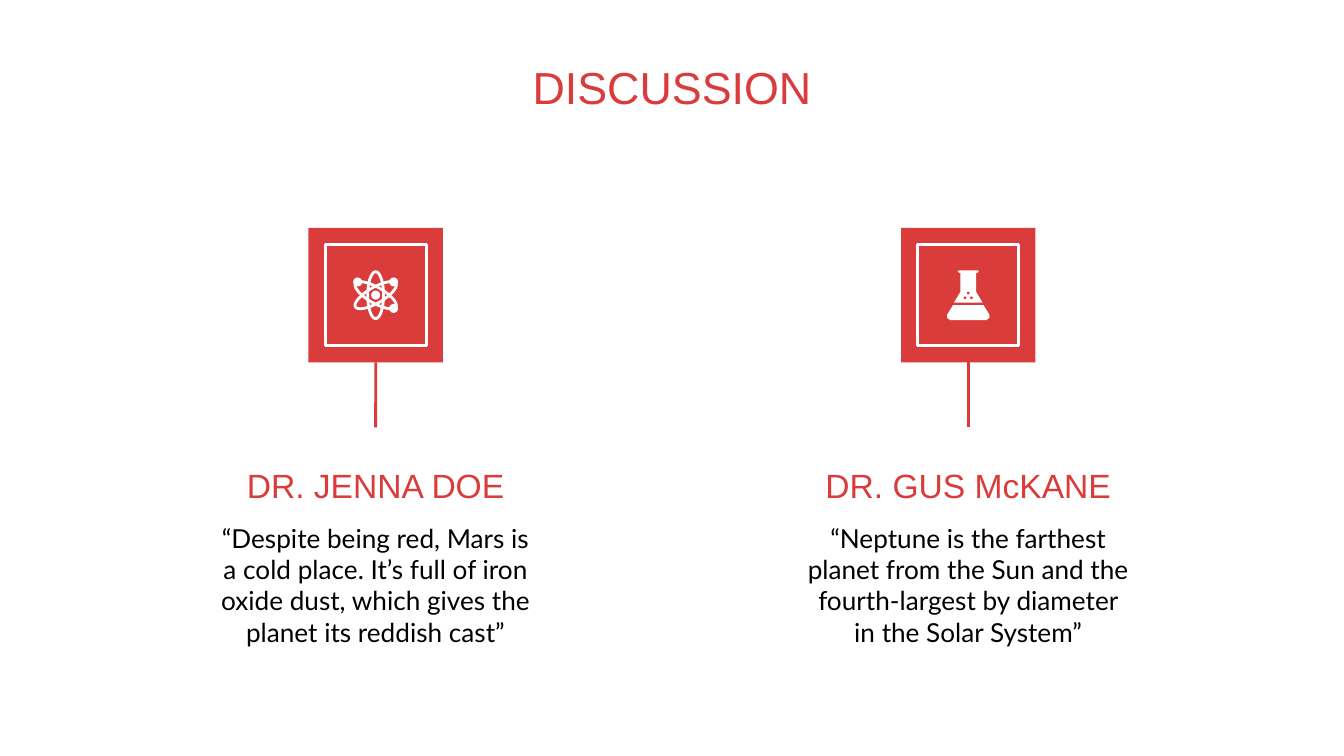
from lxml import etree
from pptx import Presentation
from pptx.dml.color import RGBColor
from pptx.enum.shapes import MSO_CONNECTOR, MSO_SHAPE
from pptx.enum.text import MSO_ANCHOR, MSO_AUTO_SIZE, PP_ALIGN
from pptx.oxml.ns import qn
from pptx.util import Cm, Pt

RED = RGBColor(0xDA, 0x3B, 0x3B)
WHITE = RGBColor(0xFF, 0xFF, 0xFF)
BLACK = RGBColor(0, 0, 0)
RECT = MSO_SHAPE.RECTANGLE
OVAL = MSO_SHAPE.OVAL
LINE = MSO_CONNECTOR.STRAIGHT
TOP = MSO_ANCHOR.TOP
BOTTOM = MSO_ANCHOR.BOTTOM
FIXED = MSO_AUTO_SIZE.NONE
CENTER = PP_ALIGN.CENTER

TITLE = {"name": "Arial", "size": Pt(24)}
NAME = {"name": "Arial", "size": Pt(18)}
QUOTE = {"name": "Lato", "size": Pt(14)}
PAD = 0.25
STROKE = Pt(1.5)

BASE = [(-0.29, 0.19), (-0.4, 0.37), (-0.4, 0.43), (-0.34, 0.47)]
NECK = [(-0.17, -0.47), (-0.2, -0.45), (-0.17, -0.42),
        (-0.15, -0.42), (-0.15, -0.06), (-0.27, 0.14)]


class Deck:
    def __init__(self, width, height):
        self.show = Presentation()
        self.show.slide_width = Cm(width)
        self.show.slide_height = Cm(height)
        self.slide = self.show.slides.add_slide(self.show.slide_layouts[5])
        self.shapes = self.slide.shapes

    def label(self, box, words, font, color, anchor):
        frame = box.text_frame
        frame.text = words
        sides = ("margin_left", "margin_top", "margin_right", "margin_bottom")
        style = {"word_wrap": True, "auto_size": FIXED, "vertical_anchor": anchor}
        for key, value in {**style, **dict.fromkeys(sides, Cm(PAD))}.items():
            setattr(frame, key, value)
        para = frame.paragraphs[0]
        para.alignment = CENTER
        for key, value in font.items():
            setattr(para.runs[0].font, key, value)
        para.runs[0].font.color.rgb = color

    def title(self, words, left, top, width, height):
        box = self.shapes.title
        place = {"left": left, "top": top, "width": width, "height": height}
        for key, value in place.items():
            setattr(box, key, Cm(value))
        self.label(box, words, TITLE, RED, TOP)

    def text(self, words, mid, top, width, height, font, color, anchor):
        box = self.shapes.add_textbox(
            Cm(mid - width / 2), Cm(top), Cm(width), Cm(height))
        self.label(box, words, font, color, anchor)
        return box

    def paint(self, shape, fill, line):
        shape.shadow.inherit = False
        if fill is None:
            shape.fill.background()
        else:
            shape.fill.solid()
            shape.fill.fore_color.rgb = fill
        if line is None:
            shape.line.fill.background()
        else:
            shape.line.color.rgb = line
            shape.line.width = STROKE

    def shape(self, kind, x, y, width, height, fill=None, line=None, turn=0):
        shape = self.shapes.add_shape(
            kind, Cm(x - width / 2), Cm(y - height / 2), Cm(width), Cm(height))
        shape.rotation = turn
        self.paint(shape, fill, line)
        return shape

    def outline(self, x, y, half, fill):
        ring = half + [(-dx, dy) for dx, dy in reversed(half)]
        points = [(Cm(x + dx), Cm(y + dy)) for dx, dy in ring]
        build = self.shapes.build_freeform(*points[0], scale=1.0)
        build.add_line_segments(points[1:], close=True)
        self.paint(build.convert_to_shape(), fill, None)

    def link(self, start, end):
        line = self.shapes.add_connector(LINE, 0, 0, 0, 0)
        line.begin_connect(start, 2)
        line.end_connect(end, 0)
        line.line.color.rgb = RED
        line.line.width = STROKE
        etree.SubElement(line._element.spPr, qn("a:effectLst"))

    def atom(self, x, y):
        for turn in (0, 60, 120):
            self.shape(OVAL, x, y, 0.3, 0.89, line=WHITE, turn=turn)
        self.shape(OVAL, x, y, 0.17, 0.17, WHITE)
        for dx, dy in ((-0.34, -0.25), (0.34, -0.25), (0.34, 0.25)):
            self.shape(OVAL, x + dx, y + dy, 0.17, 0.17, WHITE)

    def flask(self, x, y):
        for half in (BASE, NECK):
            self.outline(x, y, half, WHITE)
        for dx, dy in ((0, -0.04), (-0.06, 0.05), (0.06, 0.05)):
            self.shape(OVAL, x + dx, y + dy, 0.05, 0.05, RED)

    def card(self, mid, name, quote, icon):
        y = 5.58
        tile = self.shape(RECT, mid, y, 2.54, 2.54, RED)
        self.shape(RECT, mid, y, 1.91, 1.91, line=WHITE)
        head = self.text(name, mid, 8.08, 6.66, 1.72, NAME, RED, BOTTOM)
        self.text(quote, mid, 9.62, 6.66, 3.64, QUOTE, BLACK, TOP)
        self.link(tile, head)
        icon(mid, y)


def main():
    deck = Deck(25.4, 14.29)
    deck.title("DISCUSSION", 2.97, 0.87, 19.46, 1.6)
    cards = [
        (7.1, "DR. JENNA DOE",
         "“Despite being red, Mars is a cold place. It’s full of iron "
         "oxide dust, which gives the planet its reddish cast”", deck.atom),
        (18.3, "DR. GUS McKANE",
         "“Neptune is the farthest planet from the Sun and the "
         "fourth-largest by diameter in the Solar System”", deck.flask),
    ]
    for card in cards:
        deck.card(*card)
    deck.show.save("out.pptx")


if __name__ == "__main__":
    main()
